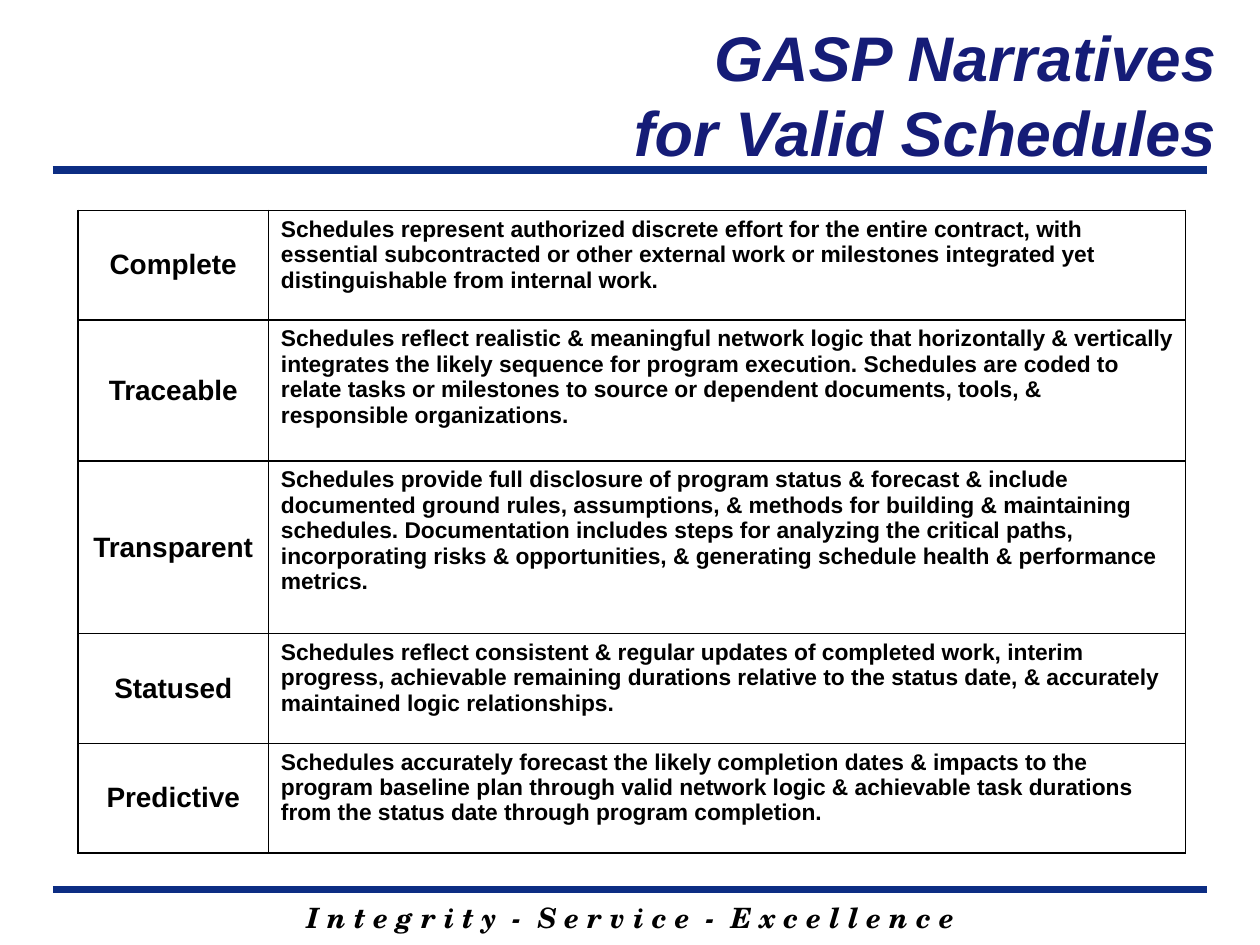
from lxml import etree
from pptx import Presentation
from pptx.dml.color import RGBColor
from pptx.enum.shapes import MSO_CONNECTOR
from pptx.enum.text import MSO_ANCHOR, PP_ALIGN
from pptx.oxml import parse_xml
from pptx.oxml.ns import nsdecls, qn
from pptx.util import Inches, Pt

STRAIGHT = MSO_CONNECTOR.STRAIGHT
MIDDLE, TOP = MSO_ANCHOR.MIDDLE, MSO_ANCHOR.TOP
LEFT, CENTER, RIGHT = PP_ALIGN.LEFT, PP_ALIGN.CENTER, PP_ALIGN.RIGHT
BLACK, NAVY, RULE_BLUE = "000000", "151C77", "0C2D83"


def color(hex_value):
    return RGBColor.from_string(hex_value)


def write(frame, lines, align, spacing, hex_value, **font_values):
    """Fill a text frame with one paragraph per line."""
    frame.word_wrap = True
    for index, line in enumerate(lines):
        paragraph = frame.paragraphs[0] if index == 0 else frame.add_paragraph()
        paragraph.text = line
        paragraph.alignment = align
        paragraph.line_spacing = spacing
        for name, value in font_values.items():
            setattr(paragraph.font, name, value)
        paragraph.font.color.rgb = color(hex_value)


prs = Presentation()
prs.slide_width, prs.slide_height = Inches(10), Inches(7.5)
slide = prs.slides.add_slide(prs.slide_layouts[6])

# Rules below the title and above the motto
margin = Inches(0.42)
for height, weight in ((1.35, 4.5), (1.33, 1.5), (7.06, 4.5)):
    y = Inches(height)
    rule = slide.shapes.add_connector(STRAIGHT, margin, y, prs.slide_width - margin, y)
    rule.line.color.rgb = color(RULE_BLUE)
    rule.line.width = Pt(weight)
    etree.SubElement(rule._element.spPr, qn("a:effectLst"))

# Motto
motto = slide.shapes.add_textbox(Inches(1.42), Inches(7.1), Inches(7.17), Inches(0.37))
write(motto.text_frame, ["I n t e g r i t y  -  S e r v i c e  -  E x c e l l e n c e"],
      CENTER, 1.0, BLACK, name="TeX Gyre Schola", size=Pt(16), bold=True, italic=True)

# Narratives: quality, row height, description
narratives = [
    ("Complete", 0.87,
     "Schedules represent authorized discrete effort for the entire contract, with "
     "essential subcontracted or other external work or milestones integrated yet "
     "distinguishable from internal work."),
    ("Traceable", 1.12,
     "Schedules reflect realistic & meaningful network logic that horizontally & vertically "
     "integrates the likely sequence for program execution. Schedules are coded to "
     "relate tasks or milestones to source or dependent documents, tools, & "
     "responsible organizations."),
    ("Transparent", 1.37,
     "Schedules provide full disclosure of program status & forecast & include "
     "documented ground rules, assumptions, & methods for building & maintaining "
     "schedules. Documentation includes steps for analyzing the critical paths, "
     "incorporating risks & opportunities, & generating schedule health & performance "
     "metrics."),
    ("Statused", 0.87,
     "Schedules reflect consistent & regular updates of completed work, interim "
     "progress, achievable remaining durations relative to the status date, & accurately "
     "maintained logic relationships."),
    ("Predictive", 0.87,
     "Schedules accurately forecast the likely completion dates & impacts to the "
     "program baseline plan through valid network logic & achievable task durations "
     "from the status date through program completion."),
]
column_widths = (1.51, 7.28)
cell_formats = ((CENTER, MIDDLE, 16), (LEFT, TOP, 13))

narrative_table = slide.shapes.add_table(
    len(narratives), len(column_widths), Inches(0.62), Inches(1.67),
    Inches(sum(column_widths)), Inches(sum(row[1] for row in narratives))).table
narrative_table.first_row = narrative_table.horz_banding = False
for column, width in zip(narrative_table.columns, column_widths):
    column.width = Inches(width)

for row_index, (quality, height, description) in enumerate(narratives):
    narrative_table.rows[row_index].height = Inches(height)
    for column_index, text in enumerate((quality, description)):
        align, anchor, size = cell_formats[column_index]
        cell = narrative_table.cell(row_index, column_index)
        cell.vertical_anchor = anchor
        write(cell.text_frame, [text], align, 1.0, BLACK,
              name="Arial", size=Pt(size), bold=True)
        # Borders go before the fill in the cell properties
        properties = cell._tc.get_or_add_tcPr()
        for side in ("lnL", "lnR", "lnT", "lnB"):
            properties.append(parse_xml(
                f'<a:{side} {nsdecls("a")} w="{Pt(1)}"><a:solidFill>'
                f'<a:srgbClr val="{BLACK}"/></a:solidFill></a:{side}>'))
        cell.fill.background()

# Title
title = slide.shapes.add_textbox(Inches(3.25), Inches(0.12), Inches(6.5), Inches(1.25))
title.text_frame.vertical_anchor = MIDDLE
write(title.text_frame, ["GASP Narratives", "for Valid Schedules"],
      RIGHT, 1.0, NAVY, name="Arial", size=Pt(36), bold=True, italic=True)

prs.save("out.pptx")
